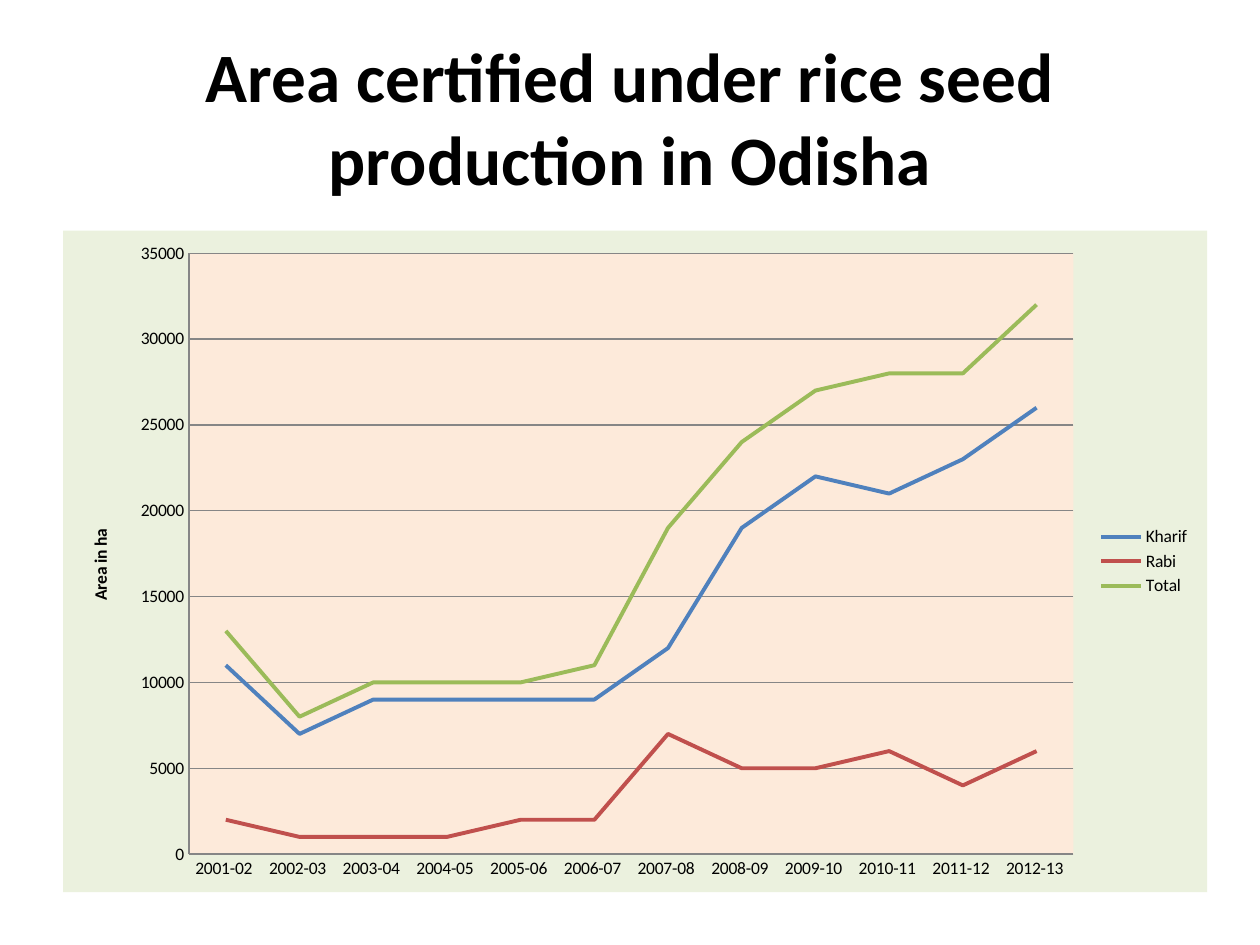
from lxml import etree
from pptx import Presentation
from pptx.chart.data import CategoryChartData
from pptx.dml.color import RGBColor
from pptx.enum.chart import XL_CHART_TYPE as ChartType
from pptx.enum.chart import XL_LEGEND_POSITION as LegendPos
from pptx.enum.chart import XL_TICK_MARK as TickMark
from pptx.enum.text import MSO_ANCHOR, PP_ALIGN
from pptx.oxml import parse_xml
from pptx.oxml.ns import nsdecls, qn
from pptx.util import Inches, Pt

FONT = "Calibri"
BLACK = RGBColor(0x00, 0x00, 0x00)
GRAY = RGBColor(0x86, 0x86, 0x86)
CHART_FILL = RGBColor(0xEB, 0xF1, 0xDE)
PLOT_FILL = RGBColor(0xFD, 0xEA, 0xDA)
BLUE = RGBColor(0x4F, 0x81, 0xBD)
RED = RGBColor(0xC0, 0x50, 0x4D)
GREEN = RGBColor(0x9B, 0xBB, 0x59)

CHART_W, CHART_H = 9.08, 5.25
SEASONS = [f"{year}-{(year + 1) % 100:02d} " for year in range(2001, 2013)]
AREAS = [
    ("Kharif ", BLUE, [11000, 7000, 9000, 9000, 9000, 9000,
                       12000, 19000, 22000, 21000, 23000, 26000]),
    ("Rabi ", RED, [2000, 1000, 1000, 1000, 2000, 2000,
                    7000, 5000, 5000, 6000, 4000, 6000]),
    ("Total ", GREEN, [13000, 8000, 10000, 10000, 10000, 11000,
                       19000, 24000, 27000, 28000, 28000, 32000]),
]


def set_font(font, size, bold=False):
    font.name = FONT
    font.size = Pt(size)
    font.bold = bold
    font.color.rgb = BLACK


def add_title(slide, text):
    title = slide.shapes.title
    title.left, title.top = Inches(0.5), Inches(0.3)
    title.width, title.height = Inches(9), Inches(1.25)
    tf = title.text_frame
    tf.text = text
    tf.word_wrap = True
    tf.vertical_anchor = MSO_ANCHOR.MIDDLE
    p = tf.paragraphs[0]
    p.alignment = PP_ALIGN.CENTER
    set_font(p.runs[0].font, 39.6, bold=True)


def fill_properties(color):
    return parse_xml(
        f'<c:spPr {nsdecls("c", "a")}><a:solidFill><a:srgbClr val="{color}"/>'
        "</a:solidFill><a:ln><a:noFill/></a:ln></c:spPr>")


def set_layout(element, index, target=None, **inches):
    """Place a chart part by inches from the chart's top left corner."""
    for old in element.findall(qn("c:layout")):
        element.remove(old)
    layout = parse_xml(f'<c:layout {nsdecls("c")}><c:manualLayout/></c:layout>')
    settings = {"layoutTarget": target} if target else {}
    settings.update(xMode="edge", yMode="edge")
    for name, length in inches.items():
        settings[name] = length / (CHART_W if name in "xw" else CHART_H)
    for name, value in settings.items():
        etree.SubElement(layout[0], qn(f"c:{name}")).set("val", str(value))
    element.insert(index, layout)


def style_axis(axis):
    axis.major_tick_mark = axis.minor_tick_mark = TickMark.NONE
    axis.format.line.color.rgb = GRAY
    set_font(axis.tick_labels.font, 10)


def style_value_axis(axis):
    style_axis(axis)
    axis.minimum_scale, axis.maximum_scale, axis.major_unit = 0, 35000, 5000
    axis.has_major_gridlines = True
    axis.major_gridlines.format.line.color.rgb = GRAY
    axis.tick_labels.number_format = "General"
    axis.tick_labels.number_format_is_linked = False
    title = axis.axis_title
    title.text_frame.text = "Area in ha "
    set_font(title.text_frame.paragraphs[0].runs[0].font, 10, bold=True)
    element = title._element
    body = element.find(".//" + qn("a:bodyPr"))
    body.set("rot", "-5400000")
    body.set("vert", "horz")
    set_layout(element, 1, x=0.18, y=2.31)


def add_area_chart(slide):
    data = CategoryChartData(number_format="General")
    data.categories = SEASONS
    for name, _, values in AREAS:
        data.add_series(name, values)
    chart = slide.shapes.add_chart(
        ChartType.LINE, Inches(0.5), Inches(1.83), Inches(CHART_W),
        Inches(CHART_H), data).chart
    set_font(chart.font, 10)
    chart.has_title = False
    chart.has_legend = True
    chart.legend.position = LegendPos.RIGHT
    chart.legend.include_in_layout = False
    set_font(chart.legend.font, 10)
    style_axis(chart.category_axis)
    style_value_axis(chart.value_axis)

    plot = chart.plots[0]
    plot.vary_by_categories = False
    for series, (_, color, _) in zip(plot.series, AREAS):
        series.smooth = False
        series.format.line.color.rgb = color
        series.format.line.width = Pt(2.25)

    chart_element = chart._chartSpace.find(qn("c:chart"))
    chart_element.addnext(fill_properties(CHART_FILL))
    plot_area = chart_element.find(qn("c:plotArea"))
    plot_area.append(fill_properties(PLOT_FILL))
    set_layout(plot_area, 0, "inner", x=1, y=0.18, w=7.02, h=4.77)


def main():
    prs = Presentation()
    prs.slide_width, prs.slide_height = Inches(10), Inches(7.5)
    slide = prs.slides.add_slide(prs.slide_layouts[5])
    add_title(slide, "Area certified under rice seed production in Odisha")
    add_area_chart(slide)
    prs.save("out.pptx")


if __name__ == "__main__":
    main()
